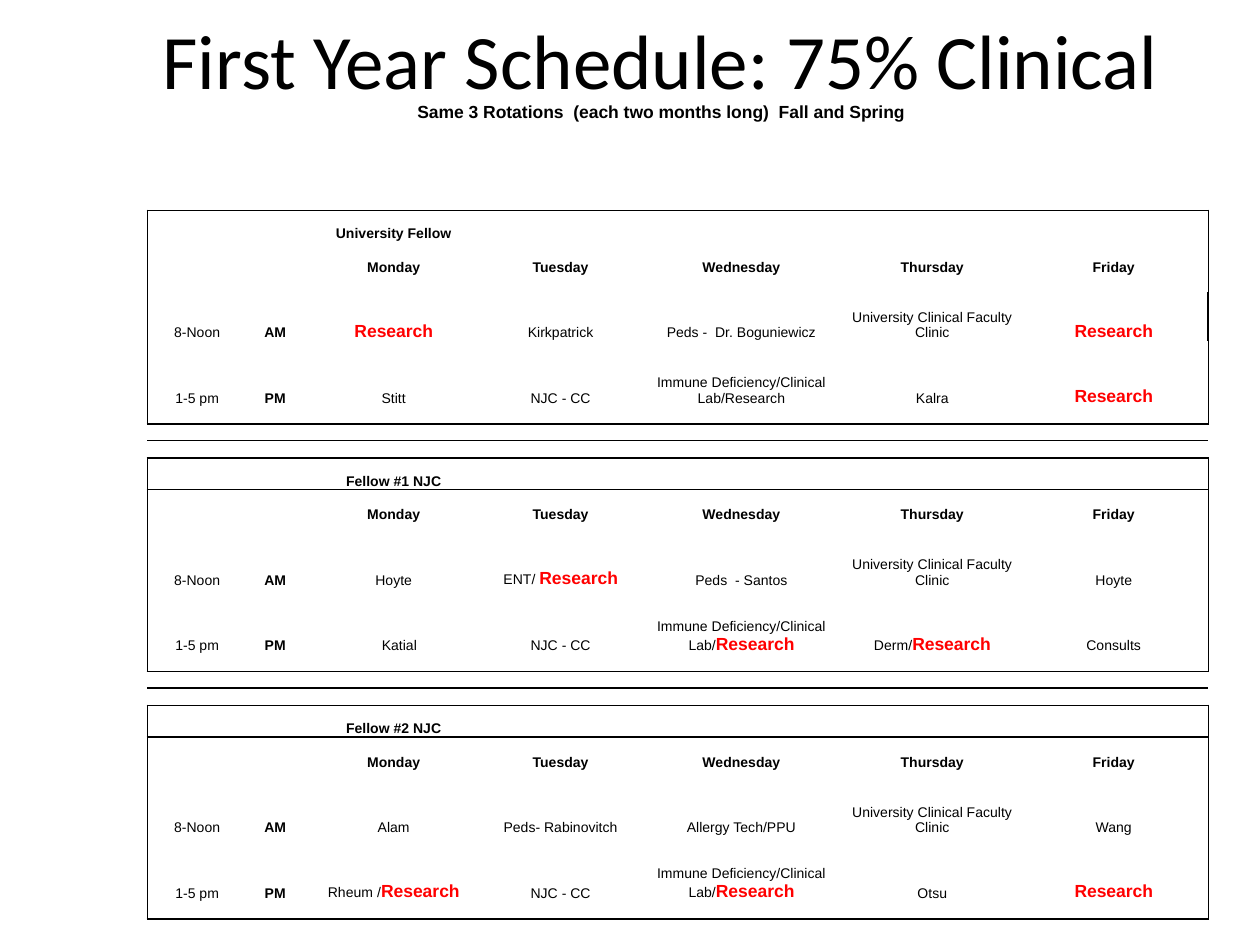
from lxml.etree import SubElement
from pptx import Presentation
from pptx.dml.color import RGBColor
from pptx.enum.text import MSO_ANCHOR, MSO_AUTO_SIZE, PP_ALIGN
from pptx.oxml.ns import qn
from pptx.util import Inches, Pt

BLACK, RED = "000000", "FF0000"
PLAIN = "{2D5ABB26-0587-4C30-8999-92F81FD0307C}"  # no style, no grid
COLS = [0.79, 0.45, 1.43, 1.22, 1.65, 1.38, 1.5]
BLOCK = [0.25, 0.13, 0.13, 0.13, 0.39, 0.13, 0.39, 0.14]
GAP = [0.13, 0.14]
STEP = len(BLOCK) + len(GAP)
DAYS = ["Monday", "Tuesday", "Wednesday", "Thursday", "Friday"]
FACULTY = "University Clinical Faculty Clinic"
IMMUNE = "Immune Deficiency/Clinical Lab/"
# Text after a bar is highlighted.
FELLOWS = [
    ("University Fellow",
     ["|Research", "Kirkpatrick", "Peds -  Dr. Boguniewicz", FACULTY, "|Research"],
     ["Stitt", "NJC - CC", IMMUNE + "Research", "Kalra", "|Research"]),
    ("Fellow #1 NJC",
     ["Hoyte", "ENT/ |Research", "Peds  - Santos", FACULTY, "Hoyte"],
     ["Katial", "NJC - CC", IMMUNE + "|Research", "Derm/|Research", "Consults"]),
    ("Fellow #2 NJC",
     ["Alam", "Peds- Rabinovitch", "Allergy Tech/PPU", FACULTY, "Wang"],
     ["Rheum /|Research", "NJC - CC", IMMUNE + "|Research", "Otsu", "|Research"]),
]


def color(code):
    return RGBColor.from_string(code)


class Deck:
    def __init__(self):
        self.prs = Presentation()
        self.prs.slide_width, self.prs.slide_height = Inches(10), Inches(7.5)
        self.slide = self.prs.slides.add_slide(self.prs.slide_layouts[5])

    def text(self, para, words, size=8, bold=False, tone=BLACK, face="Arial"):
        run = para.add_run()
        run.text = words
        font = run.font
        font.size, font.bold, font.name = Pt(size), bold, face
        font.color.rgb = color(tone)

    def title(self, head, sub):
        shape = self.slide.shapes.title
        shape.left, shape.top = Inches(0.83), Inches(0.1)
        shape.width, shape.height = Inches(8.83), Inches(0.95)
        frame = shape.text_frame
        frame.auto_size = MSO_AUTO_SIZE.NONE
        frame.vertical_anchor = MSO_ANCHOR.TOP
        frame.margin_top = frame.margin_bottom = 0
        first, second = frame.paragraphs[0], frame.add_paragraph()
        first.alignment = second.alignment = PP_ALIGN.CENTER
        second.line_spacing = 0.8
        self.text(first, head, 44, face="Calibri")
        self.text(second, sub, 10, True)

    def table(self, left, top, cols, rows):
        frame = self.slide.shapes.add_table(
            len(rows), len(cols), Inches(left), Inches(top),
            Inches(sum(cols)), Inches(sum(rows)))
        table = frame.table
        table.first_row = table.horz_banding = False
        table._tbl.tblPr.find(qn("a:tableStyleId")).text = PLAIN
        for col, width in zip(table.columns, cols):
            col.width = Inches(width)
        for row, height in zip(table.rows, rows):
            row.height = Inches(height)
        return table

    def blank(self, cell):
        """Strip a cell so that it does not stretch its row."""
        cell.margin_left = cell.margin_right = cell.margin_top = Inches(0.01)
        cell.margin_bottom = 0
        cell.vertical_anchor = MSO_ANCHOR.BOTTOM
        para = cell.text_frame.paragraphs[0]
        para.alignment = PP_ALIGN.CENTER
        SubElement(para._p, qn("a:endParaRPr"), sz="600")
        cell.fill.background()

    def label(self, cell, words, bold=False):
        para = cell.text_frame.paragraphs[0]
        plain, _, hot = words.partition("|")
        if plain:
            self.text(para, plain, bold=bold)
        if hot:
            self.text(para, hot, 10, True, RED)

    def border(self, cell, sides, width=1):
        props = cell._tc.get_or_add_tcPr()
        for spot, side in enumerate(sides):
            line = props.makeelement(qn("a:ln" + side), {"w": str(Pt(width))})
            fill = SubElement(line, qn("a:solidFill"))
            SubElement(fill, qn("a:srgbClr"), val=BLACK)
            props.insert(spot, line)


def edges(row, col):
    """Name the sides that frame each fellow's block, in schema order."""
    part, last = row % STEP, len(BLOCK) - 1
    inner = part <= last
    return [side for side, shown in (
        ("L", inner and col == 0),
        ("R", inner and col == len(COLS) - 1),
        ("T", part in (0, last + 1)),
        ("B", part in (last, STEP - 1))) if shown]


def main():
    deck = Deck()
    deck.title("First Year Schedule: 75% Clinical",
               "Same 3 Rotations  (each two months long)  Fall and Spring")
    rows = (BLOCK + GAP) * (len(FELLOWS) - 1) + BLOCK
    table = deck.table(1.17, 1.67, COLS, rows)
    for row in range(len(rows)):
        for col in range(len(COLS)):
            cell = table.cell(row, col)
            deck.blank(cell)
            thick = 1.5 if (row, col) == (4, 6) else 1
            deck.border(cell, edges(row, col), thick)

    for index, (name, morning, noon) in enumerate(FELLOWS):
        top = index * STEP
        deck.label(table.cell(top, 2), name, True)
        for col, day in enumerate(DAYS, 2):
            deck.label(table.cell(top + 2, col), day, True)
        for row, hours, half, duties in (
                (top + 4, "8-Noon", "AM", morning),
                (top + 6, "1-5 pm", "PM", noon)):
            deck.label(table.cell(row, 0), hours)
            deck.label(table.cell(row, 1), half, True)
            for col, duty in enumerate(duties, 2):
                deck.label(table.cell(row, col), duty)
    table.cell(STEP + 6, 2).margin_left = Inches(0.1)
    deck.prs.save("out.pptx")


if __name__ == "__main__":
    main()
